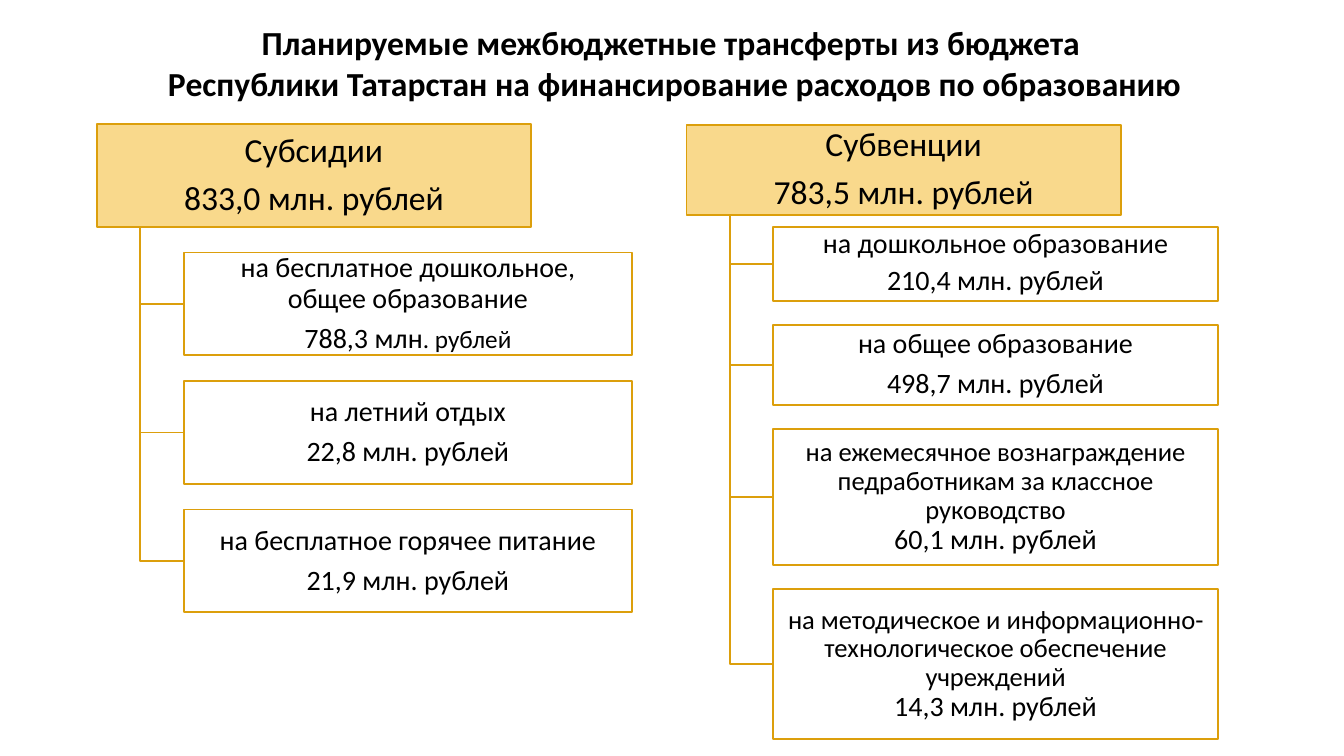
from lxml import etree
from pptx import Presentation
from pptx.dml.color import RGBColor
from pptx.enum.shapes import MSO_SHAPE
from pptx.enum.text import MSO_ANCHOR, MSO_AUTO_SIZE, PP_ALIGN
from pptx.oxml.ns import qn
from pptx.util import Inches, Pt

RECT = MSO_SHAPE.RECTANGLE
MIDDLE = MSO_ANCHOR.MIDDLE
GROW = MSO_AUTO_SIZE.SHAPE_TO_FIT_TEXT
CENTER = PP_ALIGN.CENTER

COLS, ROWS = 160, 90
CELL = Inches(1) / 12

TITLE = [
    "Планируемые межбюджетные трансферты из бюджета",
    " Республики Татарстан на финансирование расходов по образованию",
]
# Each item: height in rows, line spacing, space after in points, paragraphs of (text, size) runs
SUBSIDIES = [
    (12.24, 0.9, 7, [[("на бесплатное дошкольное,\nобщее образование", 20)],
                     [("788,3 млн", 20), (". рублей", 18)]]),
    (12.24, 0.9, 7, [[("на летний отдых", 20)], [("22,8 млн. рублей", 20)]]),
    (12.24, 0.9, 7, [[("на бесплатное горячее питание", 20)], [("21,9 млн. рублей", 20)]]),
]
GRANTS = [
    (8.8, 0.8, 7, [[("на дошкольное образование", 20)], [("210,4 млн. рублей", 20)]]),
    (9.5, 0.9, 7, [[("на общее образование", 20)], [("498,7 млн. рублей", 20)]]),
    (16.2, 0.9, 0, [[("на ежемесячное вознаграждение педработникам за классное руководство", 19)],
                    [("60,1 млн. рублей", 20)]]),
    (17.88, 0.9, 0, [[("на методическое и информационно-технологическое обеспечение учреждений", 19)],
                     [("14,3 млн. рублей", 20)]]),
]


def color(code):
    return RGBColor.from_string(code)


def apply(target, values):
    for name, value in values.items():
        setattr(target, name, value)


def grid(*cells):
    return [round(cell * CELL) for cell in cells]


class Deck:
    font = "Calibri"
    ink = "000000"
    edge = "DC9F0C"
    gold = "F9D98C"
    white = "FFFFFF"

    def __init__(self):
        self.show = Presentation()
        wide, high = grid(COLS, ROWS)
        apply(self.show, {"slide_width": wide, "slide_height": high})
        self.slide = self.show.slides.add_slide(self.show.slide_layouts[6])

    def label(self, frame, paras, bold=False, **style):
        """Fill a text frame with paragraphs of (text, size) runs; a newline is a line break."""
        for index, runs in enumerate(paras):
            para = frame.add_paragraph() if index else frame.paragraphs[0]
            apply(para, {"alignment": CENTER, **style})
            for text, size in runs:
                for part, line in enumerate(text.split("\n")):
                    if part:
                        para.add_line_break()
                    run = para.add_run()
                    run.text = line
                    apply(run.font, {"name": self.font, "size": Pt(size), "bold": bold})
                    run.font.color.rgb = color(self.ink)

    def title(self, lines, left, top, width, height):
        box = self.slide.shapes.add_textbox(*grid(left, top, width, height))
        apply(box.text_frame, {"word_wrap": False, "auto_size": GROW})
        self.label(box.text_frame, [[(line, 24)] for line in lines], bold=True)

    def stroke(self, shape):
        shape.shadow.inherit = False
        shape.line.color.rgb = color(self.edge)
        shape.line.width = Pt(1.25)

    def box(self, left, top, width, height, fill, paras, spacing, after, inset, alpha=None):
        shape = self.slide.shapes.add_shape(RECT, *grid(left, top, width, height))
        self.stroke(shape)
        shape.fill.solid()
        shape.fill.fore_color.rgb = color(fill)
        if alpha:
            tint = shape.element.spPr.find(qn("a:solidFill"))[0]
            etree.SubElement(tint, qn("a:alpha")).set("val", str(alpha * 1000))
        side, edge = Inches(inset), Inches(0.03)
        apply(shape.text_frame, {
            "word_wrap": True, "vertical_anchor": MIDDLE,
            "margin_left": side, "margin_right": side,
            "margin_top": edge, "margin_bottom": edge,
        })
        self.label(shape.text_frame, paras, line_spacing=spacing, space_after=Pt(after))

    def elbow(self, left, top, right, bottom):
        pen = self.slide.shapes.build_freeform(*grid(left, top))
        pen.add_line_segments([grid(left, bottom), grid(right, bottom)], close=False)
        shape = pen.convert_to_shape()
        shape.fill.background()
        self.stroke(shape)

    def tree(self, left, top, head, texts, first, gap, width, items):
        """Draw a heading box with its items hanging below on elbow lines."""
        span = 51.72
        indent = span / 10
        self.box(left, top, span, head, self.gold, [[(text, 24)] for text in texts], 0.9, 8.4, 0.05)
        base = top + head
        row = base + first
        inner = left + 2 * indent
        for height, spacing, after, paras in items:
            self.elbow(left + indent, base, inner, row + height / 2)
            self.box(inner, row, width, height, self.white, paras, spacing, after, 0.04, alpha=90)
            row += height + gap


def main():
    deck = Deck()
    deck.title(TITLE, 15.72, 2.04, 128.28, 10.92)
    deck.tree(11.52, 14.76, 12.24, ["Субсидии", "833,0 млн. рублей"], 3.06, 3.06, 53.4, SUBSIDIES)
    deck.tree(81.72, 14.88, 10.68, ["Субвенции", "783,5 млн. рублей"], 1.44, 2.88, 52.92, GRANTS)
    deck.show.save("out.pptx")


if __name__ == "__main__":
    main()
